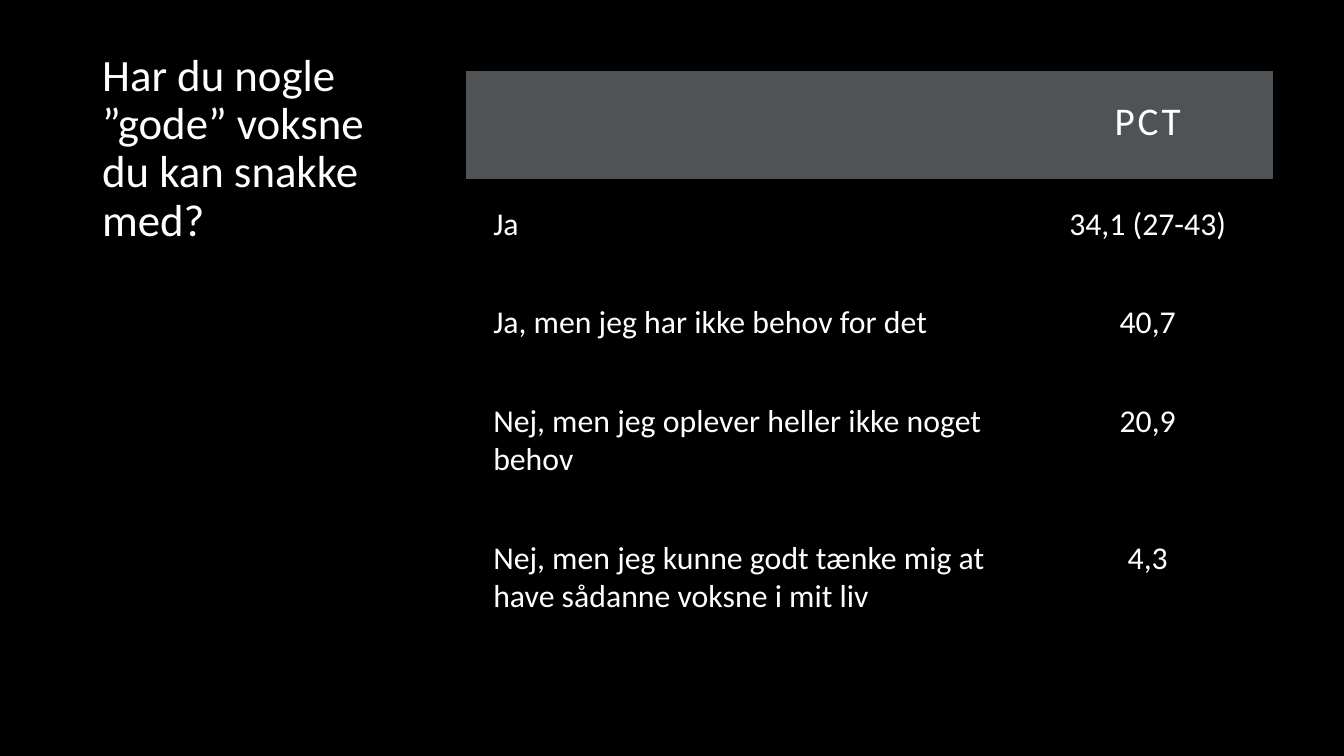
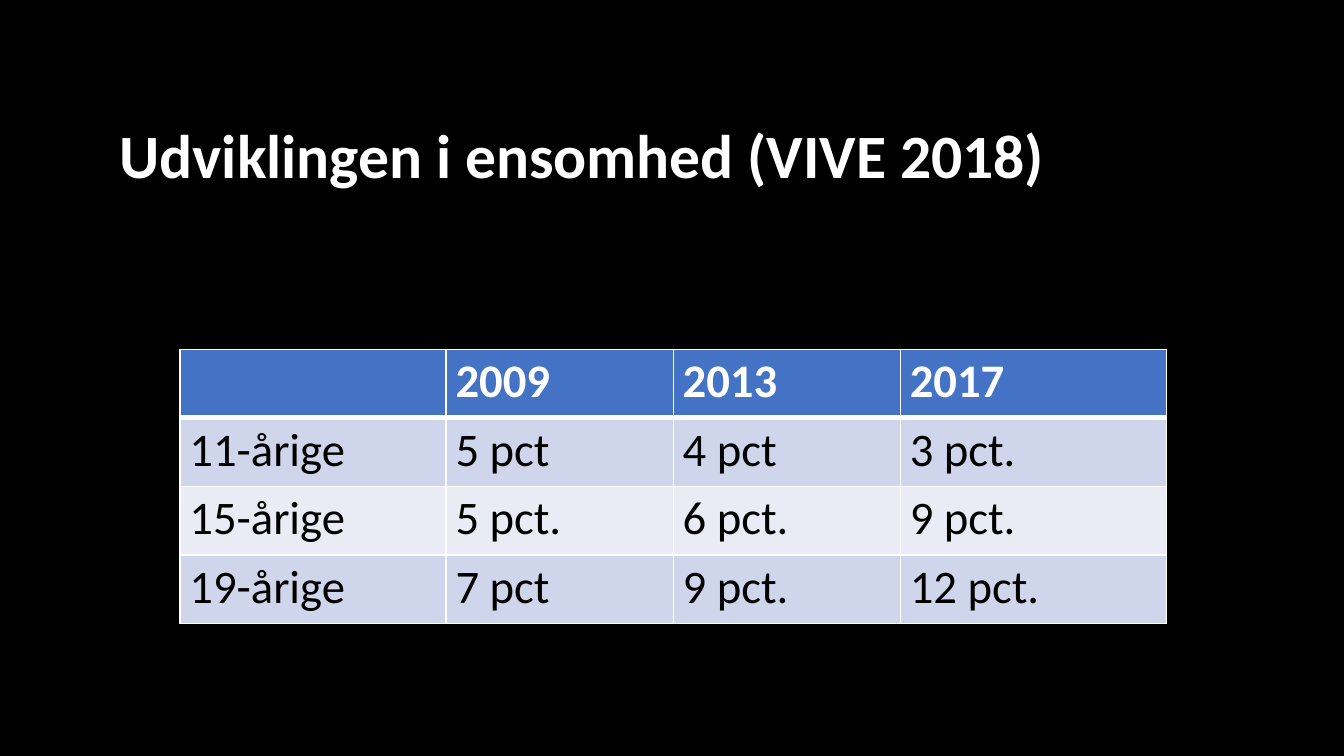
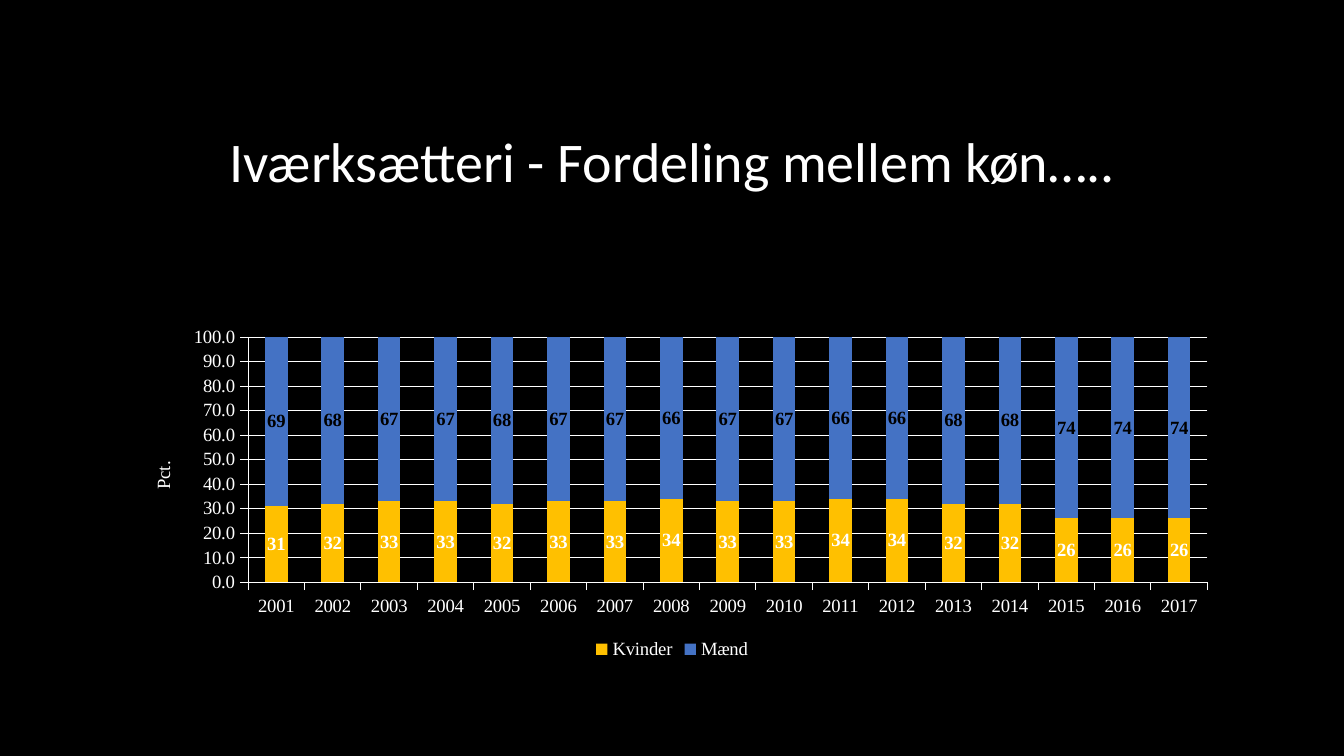
import dataclasses
import typing

import lxml.etree
import pptx
import pptx.chart.data
import pptx.dml.color
import pptx.enum.chart
import pptx.enum.dml
import pptx.enum.text
import pptx.oxml.ns
import pptx.slide
import pptx.util

WIDTH = pptx.util.Inches(10)
HEIGHT = pptx.util.Inches(5.625)
COLUMNS = 100
ROWS = 56.25

BLACK = "000000"
WHITE = "FFFFFF"
GREY = "505356"
BLUE = "4472C4"
YELLOW = "FFC000"
BANDS = ("CFD5EA", "E9EBF5")
BODY_FONT = "Calibri"
CHART_FONT = "Times New Roman"
CHART_SIZE = 10
PLAIN_TABLE = "{2D5ABB26-0587-4C30-8999-92F81FD0307C}"

ALIGN = pptx.enum.text.PP_ALIGN
ANCHOR = pptx.enum.text.MSO_ANCHOR
qn = pptx.oxml.ns.qn


class Area(typing.NamedTuple):
    left: float
    top: float
    width: float
    height: float


@dataclasses.dataclass(frozen=True)
class TextStyle:
    size: float
    hue: str = WHITE
    bold: bool = False
    font: str = BODY_FONT
    spacing: int = 0


@dataclasses.dataclass(frozen=True)
class Title:
    text: str
    area: Area
    style: TextStyle
    anchor: ANCHOR = ANCHOR.MIDDLE
    align: ALIGN = ALIGN.LEFT
    margins: tuple[float, float] = (1, 0.5)


@dataclasses.dataclass(frozen=True)
class CellStyle:
    text: TextStyle
    fill: str | None = None
    opacity: int = 100


@dataclasses.dataclass(frozen=True)
class Grid:
    left: float
    top: float
    widths: tuple[float, ...]
    heights: tuple[float, ...]
    margins: tuple[float, float]
    aligns: tuple[ALIGN, ...]
    header: CellStyle
    bands: tuple[CellStyle, ...]
    border: float = 0
    header_border: float = 0


class Series(typing.NamedTuple):
    name: str
    values: tuple[int, ...]
    fill: str
    label: str


def color(value: str) -> pptx.dml.color.RGBColor:
    return pptx.dml.color.RGBColor.from_string(value)


def across(columns: float) -> int:
    return round(WIDTH * columns / COLUMNS)


def down(rows: float) -> int:
    return round(HEIGHT * rows / ROWS)


def place(area: Area) -> tuple[int, int, int, int]:
    return across(area.left), down(area.top), across(area.width), down(area.height)


def style_font(font, style: TextStyle) -> None:
    font.name = style.font
    font.size = pptx.util.Pt(style.size)
    font.bold = style.bold
    font.color.rgb = color(style.hue)


def add_span(para, text: str, style: TextStyle) -> None:
    span = para.add_run()
    span.text = text
    style_font(span.font, style)
    if style.spacing:
        span.font._element.set("spc", str(style.spacing))


def set_margins(box, margins: tuple[float, float]) -> None:
    box.margin_left = box.margin_right = across(margins[0])
    box.margin_top = box.margin_bottom = down(margins[1])


def add_page(deck, title: Title) -> pptx.slide.Slide:
    page = deck.slides.add_slide(deck.slide_layouts.get_by_name("Title Only"))
    box = page.shapes.title
    box.left, box.top, box.width, box.height = place(title.area)
    frame = box.text_frame
    frame.word_wrap = True
    frame.auto_size = pptx.enum.text.MSO_AUTO_SIZE.NONE
    frame.vertical_anchor = title.anchor
    set_margins(frame, title.margins)
    para = frame.paragraphs[0]
    para.alignment = title.align
    para.line_spacing = 0.9
    add_span(para, title.text, title.style)
    return page


def add_borders(cell, sides: dict[str, float]) -> None:
    properties = cell._tc.get_or_add_tcPr()
    for position, (side, width) in enumerate(sides.items()):
        line = lxml.etree.Element(qn(f"a:ln{side}"), w=str(pptx.util.Pt(width)))
        fill = lxml.etree.SubElement(line, qn("a:solidFill"))
        lxml.etree.SubElement(fill, qn("a:srgbClr"), val=WHITE)
        properties.insert(position, line)


def fill_cell(cell, style: CellStyle) -> None:
    if style.fill is None:
        cell.fill.background()
        return
    cell.fill.solid()
    cell.fill.fore_color.rgb = color(style.fill)
    if style.opacity < 100:
        tone = cell._tc.tcPr.find(f".//{qn('a:srgbClr')}")
        lxml.etree.SubElement(tone, qn("a:alpha"), val=str(style.opacity * 1000))


def add_grid(page: pptx.slide.Slide, grid: Grid, rows: list[tuple[str, ...]]) -> None:
    area = Area(grid.left, grid.top, sum(grid.widths), sum(grid.heights))
    table = page.shapes.add_table(len(rows), len(grid.widths), *place(area)).table
    table.first_row = table.horz_banding = False
    table._tbl.tblPr.find(qn("a:tableStyleId")).text = PLAIN_TABLE
    for column, width in zip(table.columns, grid.widths):
        column.width = across(width)
    for number, (texts, height) in enumerate(zip(rows, grid.heights)):
        table.rows[number].height = down(height)
        style = grid.bands[(number - 1) % len(grid.bands)] if number else grid.header
        for index, (text, align) in enumerate(zip(texts, grid.aligns)):
            cell = table.cell(number, index)
            set_margins(cell, grid.margins)
            fill_cell(cell, style)
            if grid.border:
                top = grid.header_border if number == 1 else grid.border
                bottom = grid.header_border if number == 0 else grid.border
                add_borders(cell, {"L": grid.border, "R": grid.border, "T": top, "B": bottom})
            if text:
                para = cell.text_frame.paragraphs[0]
                para.alignment = align
                add_span(para, text, style.text)


def set_layout(parent, position: int, **shares: float | str) -> None:
    for former in parent.findall(qn("c:layout")):
        parent.remove(former)
    layout = lxml.etree.Element(qn("c:layout"))
    manual = lxml.etree.SubElement(layout, qn("c:manualLayout"))
    for name, share in shares.items():
        lxml.etree.SubElement(manual, qn(f"c:{name}"), val=str(share))
    parent.insert(position, layout)


def style_line(line) -> None:
    line.color.rgb = color(WHITE)
    line.width = pptx.util.Pt(0.5)


def style_axes(chart, title: str, style: TextStyle) -> None:
    for axis in (chart.category_axis, chart.value_axis):
        axis.major_tick_mark = pptx.enum.chart.XL_TICK_MARK.OUTSIDE
        axis.minor_tick_mark = pptx.enum.chart.XL_TICK_MARK.NONE
        style_font(axis.tick_labels.font, style)
        style_line(axis.format.line)
    axis = chart.value_axis
    axis.minimum_scale, axis.maximum_scale, axis.major_unit = 0, 100, 10
    axis.tick_labels.number_format = "0.0"
    axis.tick_labels.number_format_is_linked = False
    style_line(axis.major_gridlines.format.line)
    axis.has_title = True
    heading = axis.axis_title
    add_span(heading.text_frame.paragraphs[0], title, style)
    body = heading._element.find(f".//{qn('a:bodyPr')}")
    body.set("rot", "-5400000")
    body.set("vert", "horz")
    set_layout(heading._element, 1, xMode="edge", yMode="edge", x=0.03, y=0.4)


def add_stacked_chart(page: pptx.slide.Slide, area: Area, categories: list[str],
                      series: tuple[Series, ...], axis_title: str) -> None:
    data = pptx.chart.data.CategoryChartData()
    data.categories = categories
    for entry in series:
        data.add_series(entry.name, entry.values)
    kind = pptx.enum.chart.XL_CHART_TYPE.COLUMN_STACKED
    chart = page.shapes.add_chart(kind, *place(area), data).chart
    style = TextStyle(CHART_SIZE, font=CHART_FONT)
    style_font(chart.font, style)
    chart.has_title = False
    chart.has_legend = True
    chart.legend.position = pptx.enum.chart.XL_LEGEND_POSITION.BOTTOM
    chart.legend.include_in_layout = False
    style_font(chart.legend.font, style)
    style_axes(chart, axis_title, style)
    plot = chart.plots[0]
    plot.gap_width, plot.overlap, plot.vary_by_categories = 150, 100, False
    for bars, entry in zip(plot.series, series):
        bars.format.fill.solid()
        bars.format.fill.fore_color.rgb = color(entry.fill)
        labels = bars.data_labels
        labels.show_value = True
        labels.number_format = "#,##0"
        labels.number_format_is_linked = False
        labels.position = pptx.enum.chart.XL_LABEL_POSITION.CENTER
        style_font(labels.font, dataclasses.replace(style, hue=entry.label, bold=True))
    plot_area = chart._chartSpace.find(f".//{qn('c:plotArea')}")
    set_layout(plot_area, 0, layoutTarget="inner", xMode="edge", yMode="edge",
               x=0.12, y=0.05, w=0.86, h=0.71)


def add_adults_page(deck) -> None:
    page = add_page(deck, Title(
        "Har du nogle ”gode” voksne du kan snakke med?",
        Area(6.9, 1.4, 23.3, 19.4), TextStyle(24), margins=(0.7, 0.4)))
    answer = TextStyle(17)
    grid = Grid(
        left=34.7, top=5.3, widths=(41.4, 18.6), heights=(8, 7.3, 7.3, 10.2, 13),
        margins=(2, 2), aligns=(ALIGN.LEFT, ALIGN.CENTER),
        header=CellStyle(TextStyle(21, spacing=150), GREY),
        bands=(CellStyle(answer), CellStyle(answer, BLACK, 8)))
    add_grid(page, grid, [
        ("", "PCT"),
        ("Ja", "34,1 (27-43)"),
        ("Ja, men jeg har ikke behov for det", "40,7"),
        ("Nej, men jeg oplever heller ikke noget behov", "20,9"),
        ("Nej, men jeg kunne godt tænke mig at have sådanne voksne i mit liv", "4,3"),
    ])


def add_loneliness_page(deck) -> None:
    page = add_page(deck, Title(
        "Udviklingen i ensomhed (VIVE 2018)", Area(7.9, 3.6, 84.3, 11.2),
        TextStyle(33, bold=True), anchor=ANCHOR.BOTTOM))
    rows = [
        ("", "2009", "2013", "2017"),
        ("11-årige", "5 pct", "4 pct", "3 pct."),
        ("15-årige", "5 pct.", "6 pct.", "9 pct."),
        ("19-årige", "7 pct", "9 pct.", "12 pct."),
    ]
    grid = Grid(
        left=13.4, top=26, widths=(19.8, 16.9, 16.9, 19.8), heights=(5.1,) * len(rows),
        margins=(0.7, 0.3), aligns=(ALIGN.LEFT,) * 4,
        header=CellStyle(TextStyle(25, bold=True), BLUE),
        bands=tuple(CellStyle(TextStyle(25, BLACK), band) for band in BANDS),
        border=1, header_border=3)
    add_grid(page, grid, rows)


def add_founders_page(deck) -> None:
    page = add_page(deck, Title(
        "Iværksætteri - Fordeling mellem køn…..", Area(9.7, 6.8, 80.7, 10.9),
        TextStyle(30), align=ALIGN.CENTER))
    women = (31, 32, 33, 33, 32, 33, 33, 34, 33, 33, 34, 34, 32, 32, 26, 26, 26)
    men = (69, 68, 67, 67, 68, 67, 67, 66, 67, 67, 66, 66, 68, 68, 74, 74, 74)
    add_stacked_chart(
        page, Area(8.5, 23.8, 83, 25.7), [str(year) for year in range(2001, 2018)],
        (Series("Kvinder", women, YELLOW, WHITE), Series("Mænd", men, BLUE, BLACK)), "Pct.")


def main() -> None:
    deck = pptx.Presentation()
    deck.slide_width, deck.slide_height = WIDTH, HEIGHT
    backdrop = deck.slide_master.background.fill
    backdrop.solid()
    backdrop.fore_color.rgb = color(BLACK)
    add_adults_page(deck)
    add_loneliness_page(deck)
    add_founders_page(deck)
    deck.save("out.pptx")


if __name__ == "__main__":
    main()
